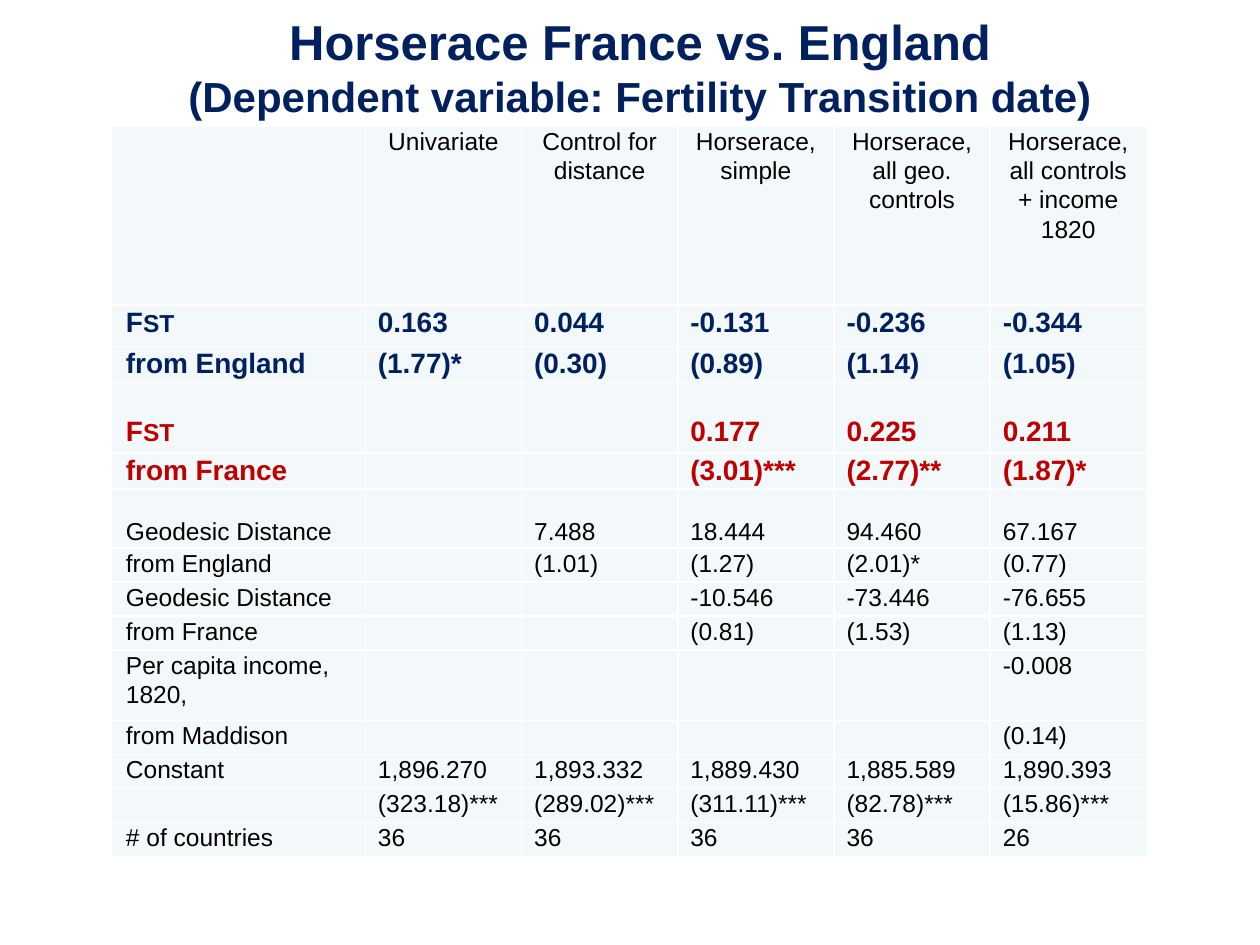
from lxml.etree import SubElement
from pptx import Presentation
from pptx.dml.color import RGBColor
from pptx.enum.text import MSO_ANCHOR, PP_ALIGN
from pptx.oxml.ns import qn
from pptx.util import Inches, Pt

NAVY = RGBColor(0x00, 0x20, 0x60)
RED = RGBColor(0xC0, 0x00, 0x00)
BLACK = RGBColor(0x00, 0x00, 0x00)
WHITE = RGBColor(0xFF, 0xFF, 0xFF)
PALE = RGBColor(0xF3, 0xF9, 0xFA)

TITLE = [("Horserace France vs. England", 28),
         ("(Dependent variable: Fertility Transition date)", 24)]

LABEL_WIDTH, VALUE_WIDTH = 2.02, 1.24
ROW_HEIGHT = 0.27
ROW_HEIGHTS = {0: 1.42, 1: 0.33, 3: 0.56, 5: 0.45, 9: 0.56}
GAPS_ABOVE = {3: 0.25, 5: 0.22}
ROW_COLOURS = {1: NAVY, 2: NAVY, 3: RED, 4: RED}

ROWS = [
    ["", "Univariate", "Control for distance", "Horserace, simple",
     "Horserace, all geo. controls", "Horserace, all controls + income 1820"],
    ["FST", "0.163", "0.044", "-0.131", "-0.236", "-0.344"],
    ["from England", "(1.77)*", "(0.30)", "(0.89)", "(1.14)", "(1.05)"],
    ["FST", "", "", "0.177", "0.225", "0.211"],
    ["from France", "", "", "(3.01)***", "(2.77)**", "(1.87)*"],
    ["Geodesic Distance", "", "7.488", "18.444", "94.460", "67.167"],
    ["from England", "", "(1.01)", "(1.27)", "(2.01)*", "(0.77)"],
    ["Geodesic Distance", "", "", "-10.546", "-73.446", "-76.655"],
    ["from France", "", "", "(0.81)", "(1.53)", "(1.13)"],
    ["Per capita income, 1820,", "", "", "", "", "-0.008"],
    ["from Maddison", "", "", "", "", "(0.14)"],
    ["Constant", "1,896.270", "1,893.332", "1,889.430", "1,885.589", "1,890.393"],
    ["", "(323.18)***", "(289.02)***", "(311.11)***", "(82.78)***", "(15.86)***"],
    ["# of countries", "36", "36", "36", "36", "26"],
]


def set_font(font, size, colour, bold):
    font.name = "Arial"
    font.size = Pt(size)
    font.bold = bold
    font.color.rgb = colour


def add_title(page):
    box = page.shapes.add_textbox(Inches(0.58), Inches(-0.5), Inches(9), Inches(1.97))
    frame = box.text_frame
    frame.word_wrap = True
    frame.vertical_anchor = MSO_ANCHOR.MIDDLE
    frame.margin_top, frame.margin_bottom = Inches(0.08), 0
    for index, (text, size) in enumerate(TITLE):
        para = frame.add_paragraph() if index else frame.paragraphs[0]
        para.text = text
        para.alignment = PP_ALIGN.CENTER
        set_font(para.font, size, NAVY, True)


def add_borders(cell):
    """Draw thin white lines on all four sides; they must precede the fill."""
    properties = cell._tc.get_or_add_tcPr()
    for side in ("a:lnL", "a:lnR", "a:lnT", "a:lnB"):
        line = SubElement(properties, qn(side), w=str(Pt(1)))
        fill = SubElement(line, qn("a:solidFill"))
        SubElement(fill, qn("a:srgbClr"), val=str(WHITE))


def write_text(para, text, size, colour, bold):
    set_font(para.font, size, colour, bold)
    if text == "FST":
        para.add_run().text = "F"
        subscript = para.add_run()
        subscript.text = "ST"
        subscript.font.size = Pt(14)
    elif text:
        para.add_run().text = text
    else:
        SubElement(para._p, qn("a:endParaRPr"), sz=str(size * 100))


def fill_cell(cell, text, row, column):
    add_borders(cell)
    cell.fill.solid()
    cell.fill.fore_color.rgb = PALE
    cell.margin_left = Inches(0.1 if column else 0.12)
    cell.margin_right = Inches(0.1)
    cell.margin_top = Inches(GAPS_ABOVE.get(row, 0) if text else 0)
    cell.margin_bottom = 0
    para = cell.text_frame.paragraphs[0]
    para.line_spacing = 1.07
    if row == 0:
        para.alignment = PP_ALIGN.CENTER
        para.space_before = para.space_after = Pt(4)
    strong = row in ROW_COLOURS and text != ""
    write_text(para, text, 16 if strong else 14, ROW_COLOURS.get(row, BLACK), strong)


def add_results(page):
    heights = [ROW_HEIGHTS.get(row, ROW_HEIGHT) for row in range(len(ROWS))]
    widths = [LABEL_WIDTH] + [VALUE_WIDTH] * (len(ROWS[0]) - 1)
    table = page.shapes.add_table(
        len(heights), len(widths), Inches(0.88), Inches(1),
        Inches(sum(widths)), Inches(sum(heights))).table
    table.first_row = table.horz_banding = False
    for column, width in zip(table.columns, widths):
        column.width = Inches(width)
    for row, (texts, height) in enumerate(zip(ROWS, heights)):
        table.rows[row].height = Inches(height)
        for column, text in enumerate(texts):
            fill_cell(table.cell(row, column), text, row, column)


def main():
    deck = Presentation()
    deck.slide_width, deck.slide_height = Inches(10), Inches(7.5)
    page = deck.slides.add_slide(deck.slide_layouts[6])
    add_title(page)
    add_results(page)
    deck.save("out.pptx")


if __name__ == "__main__":
    main()
